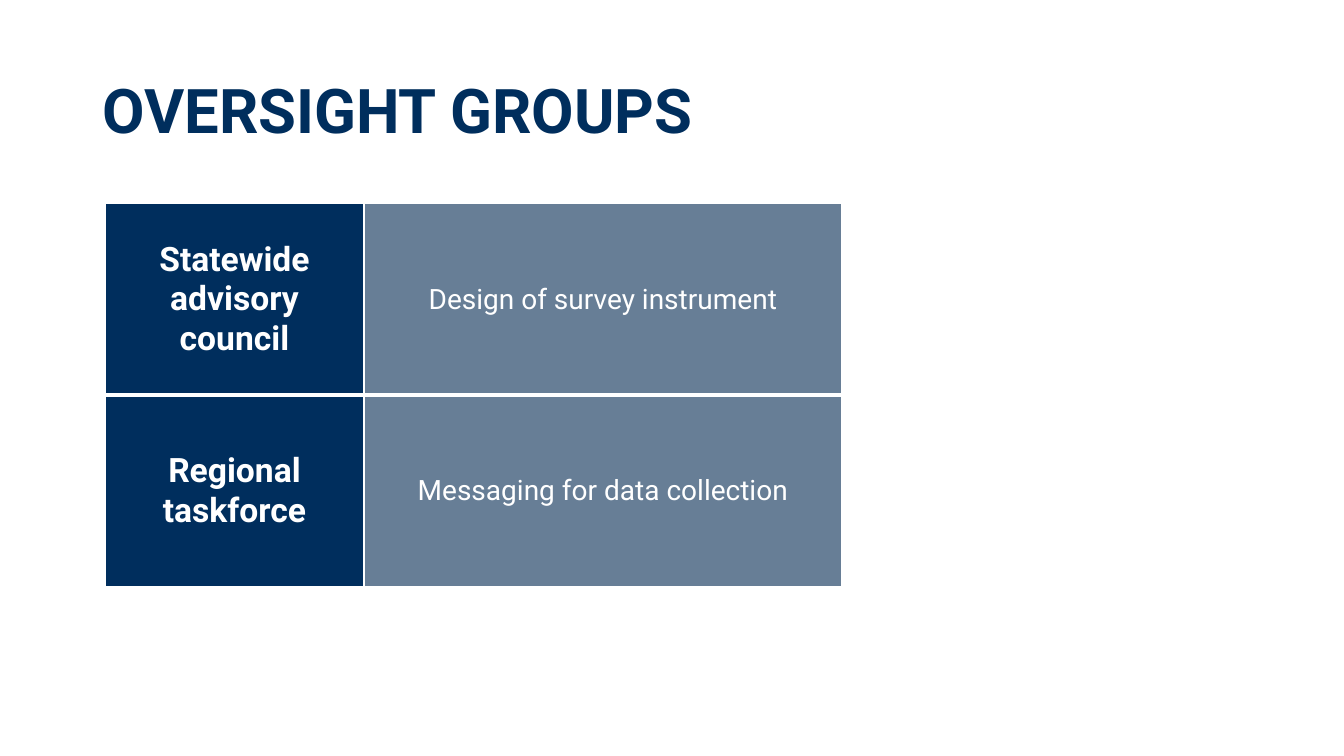
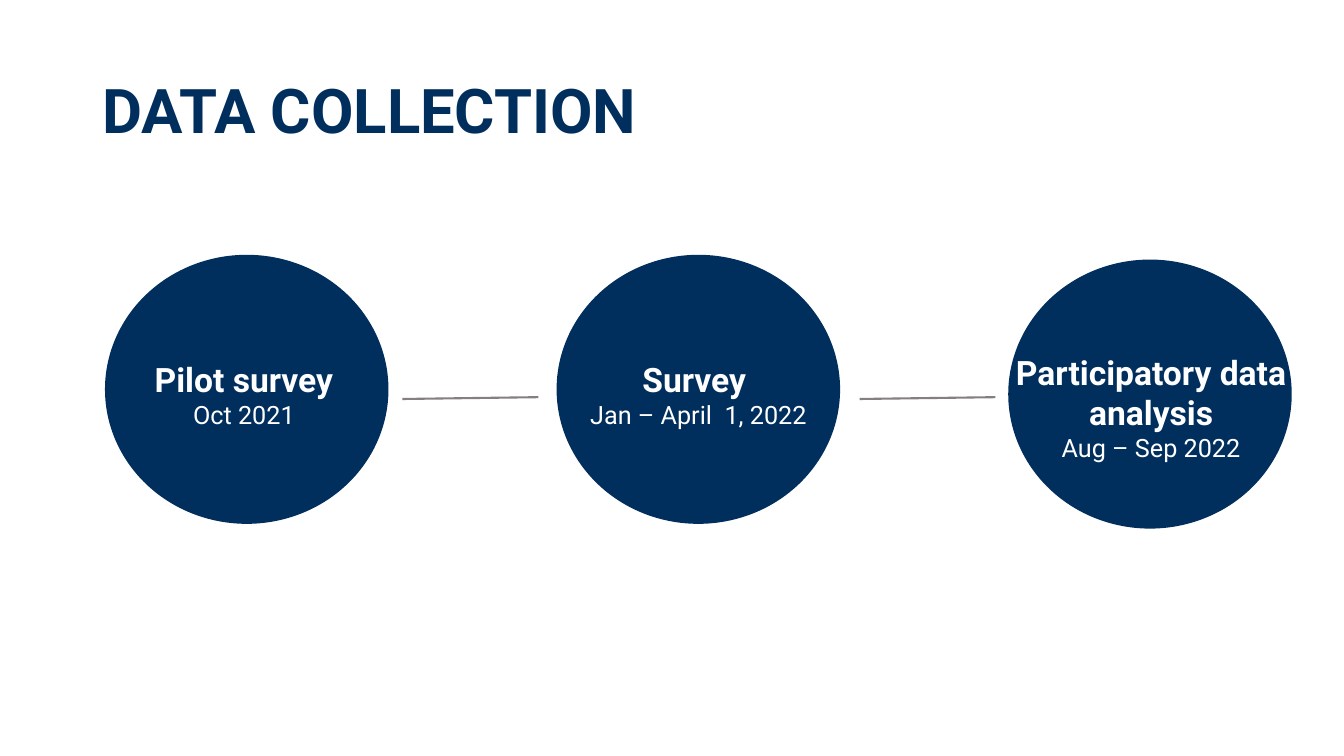
"""Build two slides: oversight groups and the data collection timeline."""
from lxml.etree import SubElement
from pptx import Presentation
from pptx.dml.color import RGBColor
from pptx.enum.shapes import MSO_CONNECTOR as CONNECTOR, MSO_SHAPE as SHAPE
from pptx.enum.text import MSO_ANCHOR as ANCHOR, PP_ALIGN as ALIGN
from pptx.oxml.ns import qn
from pptx.util import Pt

COLORS = {"navy": "002E5D", "slate": "163A5E", "white": "FFFFFF", "gray": "857F7F"}
FONT = "Roboto"
SLIDE_SIZE = 960, 540

GROUPS = [
    ("Statewide advisory council", "Design of survey instrument"),
    ("Regional taskforce", "Messaging for data collection"),
]
GROUP_COLUMNS = [
    {"width": 185, "fill": "navy", "opacity": 100, "size": 24, "bold": True},
    {"width": 341.4, "fill": "slate", "opacity": 65, "size": 20, "bold": False},
]
ROW_HEIGHT = 136.8
CONTENT_LEFT, TABLE_TOP = 75, 145.5

PHASES = [
    {"name": "Pilot survey", "dates": "Oct 2021", "circle_top": 182, "label_at": (65.5, 252.7)},
    {"name": "Survey ", "dates": "Jan – April  1, 2022", "circle_top": 182, "label_at": (390.2, 252.7)},
    {"name": "Participatory data analysis", "dates": "Aug – Sep 2022", "circle_top": 185.4,
     "label_at": (713.5, 247.7)},
]
CIRCLE_SIZE = 202.5, 192.2
LABEL_WIDTH, LABEL_LINE = 217.4, 58.3
PHASE_PITCH = 322.6
LINK_LEFT, LINK_PITCH, LINK_WIDTH = 287.5, 326.5, 97
LINK_START_Y, LINK_END_Y = 285, 283.7


def rgb(name):
    return RGBColor.from_string(COLORS[name])


def write(paragraph, text, size, bold, color="white", align=ALIGN.CENTER):
    paragraph.text = text
    paragraph.alignment = align
    font = paragraph.font
    font.name, font.size, font.bold = FONT, Pt(size), bold
    font.color.rgb = rgb(color)


def add_titled_slide(deck, title):
    slide = deck.slides.add_slide(deck.slide_layouts[6])
    frame = slide.shapes.add_textbox(Pt(66), Pt(28.8), Pt(828), Pt(104.4)).text_frame
    frame.word_wrap = True
    frame.vertical_anchor = ANCHOR.MIDDLE
    heading = frame.paragraphs[0]
    write(heading, title, 44, True, "navy", ALIGN.LEFT)
    heading.line_spacing = 0.9
    return slide


def style_cell(cell, column, bottom_width):
    properties = cell._tc.get_or_add_tcPr()
    for side in ("lnL", "lnR", "lnT", "lnB"):
        width = bottom_width if side == "lnB" else 1
        border = SubElement(properties, qn(f"a:{side}"), w=str(Pt(width)))
        SubElement(SubElement(border, qn("a:solidFill")), qn("a:srgbClr"), val=COLORS["white"])
    cell.fill.solid()
    cell.fill.fore_color.rgb = rgb(column["fill"])
    if column["opacity"] < 100:
        fill_color = properties.find(qn("a:solidFill")).find(qn("a:srgbClr"))
        SubElement(fill_color, qn("a:alpha"), val=str(column["opacity"] * 1000))


def add_groups_table(slide):
    width = sum(column["width"] for column in GROUP_COLUMNS)
    table = slide.shapes.add_table(
        len(GROUPS), len(GROUP_COLUMNS), Pt(CONTENT_LEFT), Pt(TABLE_TOP),
        Pt(width), Pt(ROW_HEIGHT * len(GROUPS))).table
    table.first_row = table.horz_banding = False
    for index, column in enumerate(GROUP_COLUMNS):
        table.columns[index].width = Pt(column["width"])
    for row, group in enumerate(GROUPS):
        table.rows[row].height = Pt(ROW_HEIGHT)
        for index, (text, column) in enumerate(zip(group, GROUP_COLUMNS)):
            cell = table.cell(row, index)
            cell.vertical_anchor = ANCHOR.MIDDLE
            write(cell.text_frame.paragraphs[0], text, column["size"], column["bold"])
            style_cell(cell, column, 3 if row == 0 else 1)


def add_phase(slide, index, phase):
    circle = slide.shapes.add_shape(
        SHAPE.OVAL, Pt(CONTENT_LEFT + index * PHASE_PITCH), Pt(phase["circle_top"]),
        *map(Pt, CIRCLE_SIZE))
    circle.shadow.inherit = False
    circle.fill.solid()
    circle.fill.fore_color.rgb = rgb("navy")
    circle.line.fill.background()
    label = slide.shapes.add_textbox(
        *map(Pt, phase["label_at"]), Pt(LABEL_WIDTH), Pt(LABEL_LINE)).text_frame
    label.word_wrap = True
    write(label.paragraphs[0], phase["name"], 24, True)
    write(label.add_paragraph(), phase["dates"], 18, False)


def add_link(slide, index):
    left = LINK_LEFT + index * LINK_PITCH
    link = slide.shapes.add_connector(
        CONNECTOR.STRAIGHT, Pt(left), Pt(LINK_START_Y), Pt(left + LINK_WIDTH), Pt(LINK_END_Y))
    link.line.color.rgb = rgb("gray")
    link.line.width = Pt(1.5)
    SubElement(link._element.spPr, qn("a:effectLst"))


def main():
    deck = Presentation()
    deck.slide_width, deck.slide_height = map(Pt, SLIDE_SIZE)
    add_groups_table(add_titled_slide(deck, "OVERSIGHT GROUPS"))
    timeline = add_titled_slide(deck, "DATA COLLECTION")
    for index, phase in enumerate(PHASES):
        add_phase(timeline, index, phase)
    for index in range(len(PHASES) - 1):
        add_link(timeline, index)
    deck.save("out.pptx")


if __name__ == "__main__":
    main()
